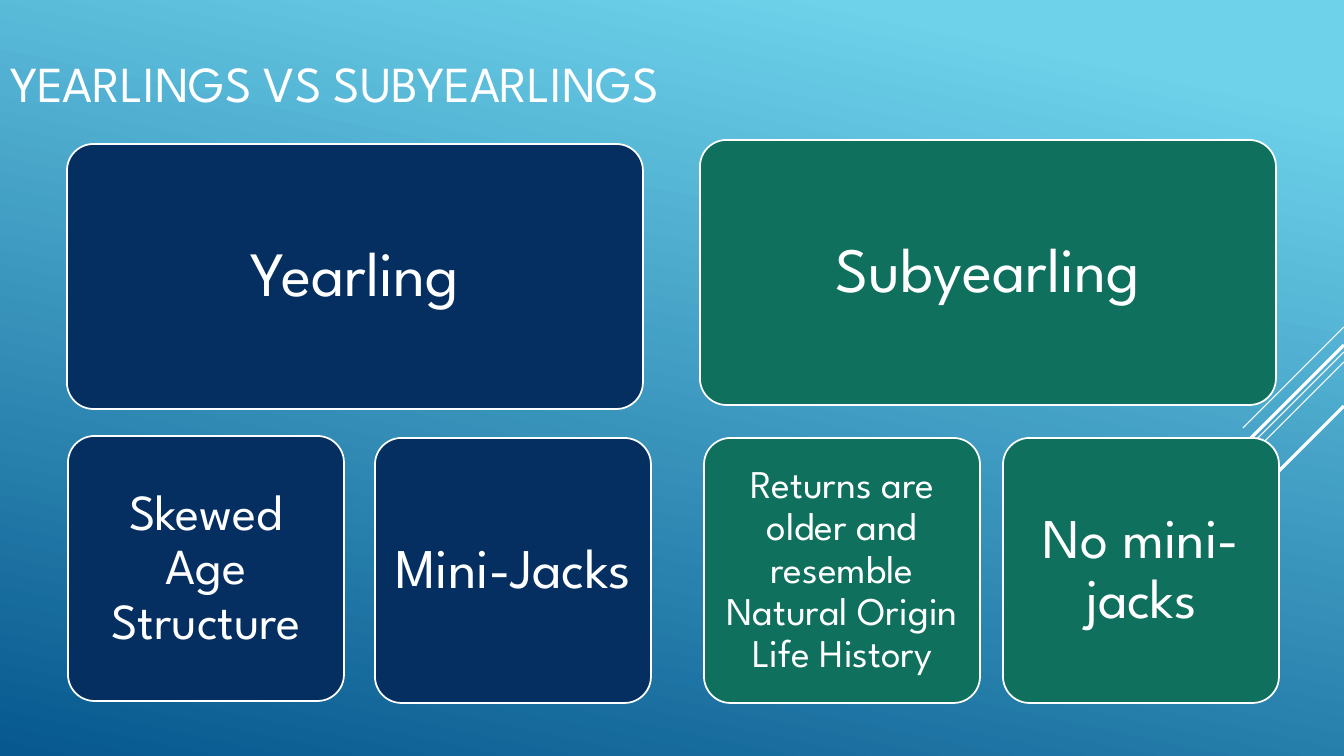
"""Build the slide comparing yearlings with subyearlings."""
from lxml import etree
from pptx import Presentation
from pptx import util as u
from pptx.dml.color import RGBColor
from pptx.enum import shapes, text
from pptx.oxml.ns import qn

WHITE = RGBColor(0xFF, 0xFF, 0xFF)
NAVY = RGBColor(0x05, 0x2F, 0x61)
GREEN = RGBColor(0x0F, 0x70, 0x5D)
SKY = RGBColor(0x6E, 0xD2, 0xEB)
DEEP = RGBColor(0x06, 0x58, 0x8E)

FONT = "League Spartan"
WIDE, HIGH = 1344, 756
PX = u.Inches(1) / 100.8
TITLE = "YEARLINGS VS SUBYEARLINGS"
STOPS = [(0.1, SKY), (1, DEEP)]
RAYS = [(327, 101, 0.75), (352, 329, 0.75), (362, 208, 0.75),
        (345, 192, 2.25), (406, 140, 2.25)]
BIG = {"width": 576, "inset": 19}
SMALL = {"width": 276, "inset": 10}
CARD_H = 265
CARDS = [
    ("Yearling", 67, 144, BIG, 45, NAVY),
    ("Mini-Jacks", 375, 438, SMALL, 40, NAVY),
    ("Skewed Age Structure", 68, 436, SMALL, 36, NAVY),
    ("Subyearling", 700, 140, BIG, 45, GREEN),
    ("Returns are older and resemble Natural Origin Life History",
     704, 438, SMALL, 28, GREEN),
    ("No mini-jacks", 1003, 438, SMALL, 40, GREEN),
]


def px(*sizes):
    return [u.Emu(round(size * PX)) for size in sizes]


def put(item, **values):
    for name, value in values.items():
        setattr(item, name, value)


def write(frame, words, size, align, inset):
    sides = ("left", "top", "right", "bottom")
    put(frame, word_wrap=True, vertical_anchor=text.MSO_ANCHOR.MIDDLE,
        **{f"margin_{side}": px(inset)[0] for side in sides})
    para = frame.paragraphs[0]
    put(para, alignment=align, line_spacing=0.9)
    run = para.add_run()
    run.text = words
    put(run.font, name=FONT, size=u.Pt(size))
    run.font.color.rgb = WHITE


def add_ray(slide, top, reach, weight):
    ray = slide.shapes.add_connector(
        shapes.MSO_CONNECTOR.STRAIGHT, *px(WIDE, top, WIDE - reach, top + reach))
    ray.line.color.rgb = WHITE
    ray.line.width = u.Pt(weight)
    etree.SubElement(ray._element.spPr, qn("a:effectLst"))


def add_card(slide, words, left, top, kind, size, fill):
    card = slide.shapes.add_shape(
        shapes.MSO_SHAPE.ROUNDED_RECTANGLE, *px(left, top, kind["width"], CARD_H))
    card.adjustments[0] = 0.1
    card.shadow.inherit = False
    card.fill.solid()
    card.fill.fore_color.rgb = fill
    card.line.color.rgb = WHITE
    card.line.width = u.Pt(1.25)
    write(card.text_frame, words, size, text.PP_ALIGN.CENTER, kind["inset"])


def main():
    deck = Presentation()
    deck.slide_width, deck.slide_height = px(WIDE, HIGH)
    slide = deck.slides.add_slide(deck.slide_layouts[6])
    back = slide.background.fill
    back.gradient()
    back.gradient_angle = 258
    for stop, (place, color) in zip(back.gradient_stops, STOPS):
        stop.position = place
        stop.color.rgb = color
    for ray in RAYS:
        add_ray(slide, *ray)
    title = slide.shapes.add_textbox(*px(0, 0, WIDE, 172))
    write(title.text_frame, TITLE, 36, text.PP_ALIGN.LEFT, 10)
    for card in CARDS:
        add_card(slide, *card)
    deck.save("out.pptx")


if __name__ == "__main__":
    main()
